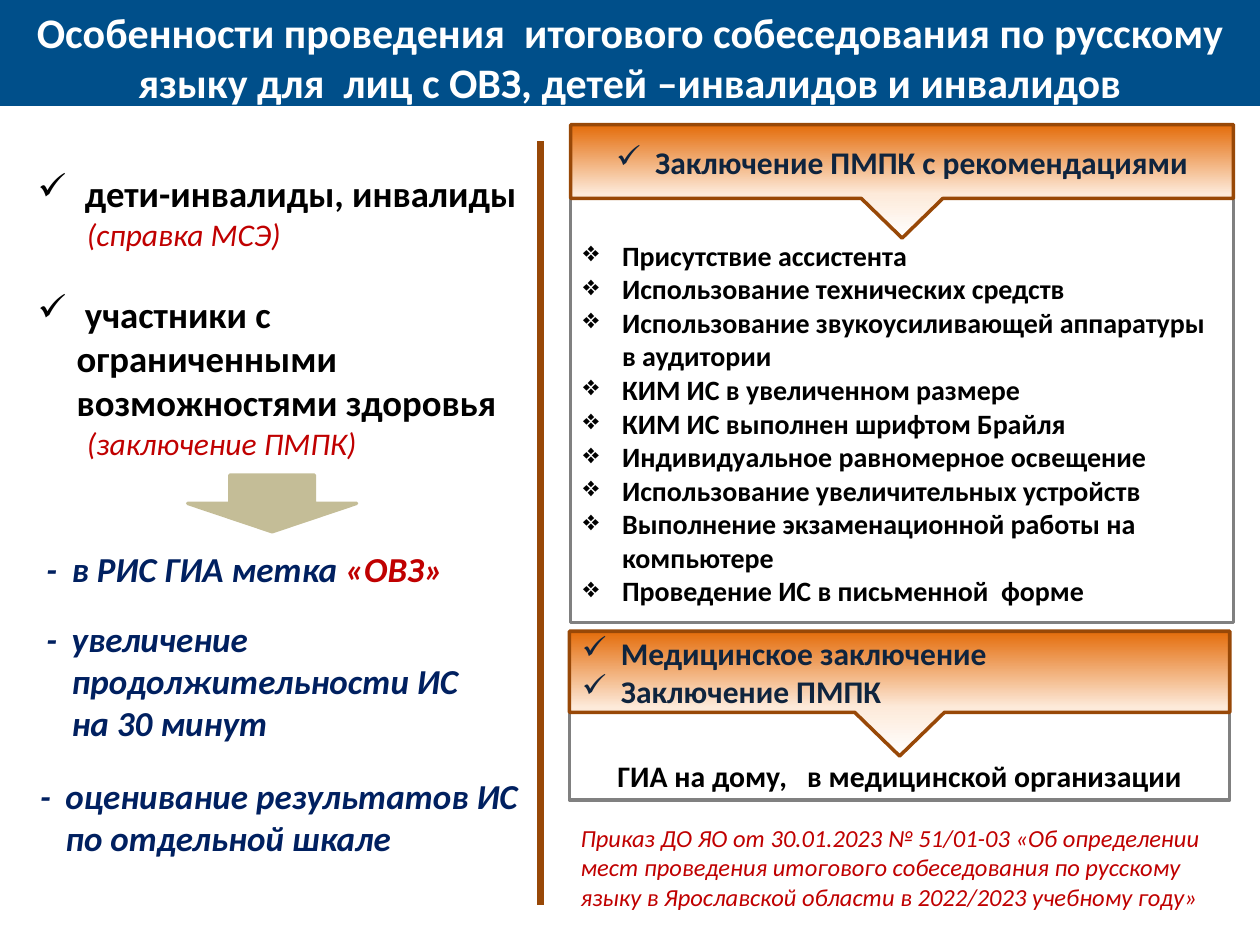
from lxml import etree
from pptx import Presentation
from pptx import util as u
from pptx.dml.color import RGBColor
from pptx.enum import shapes, text
from pptx.oxml import ns

WIDTH, HEIGHT = 10, 7.5
FONT = "Calibri"
WHITE = RGBColor(0xFF, 0xFF, 0xFF)
BLACK = RGBColor(0, 0, 0)
BLUE = RGBColor(0x00, 0x4F, 0x8A)
NAVY = RGBColor(0x00, 0x20, 0x60)
INK = RGBColor(0x0F, 0x24, 0x3E)
RED = RGBColor(0xC0, 0, 0)
SAND = RGBColor(0xC4, 0xBD, 0x97)
GREY = RGBColor(0x80, 0x80, 0x80)
BROWN = RGBColor(0x98, 0x48, 0x07)
GRADIENT = [(0, "E46C0A"), (61, "FDEADA"), (100, "FFFFFF")]

TITLE = ("Особенности проведения  итогового собеседования по русскому "
         "языку для  лиц с ОВЗ, детей –инвалидов и инвалидов")
GROUPS = [
    (" дети-инвалиды, инвалиды", "(справка МСЭ)"),
    (" участники с ограниченными возможностями здоровья", "(заключение ПМПК)"),
]
CONDITIONS = [
    "Присутствие ассистента",
    "Использование технических средств",
    "Использование звукоусиливающей аппаратуры в аудитории",
    "КИМ ИС в увеличенном размере",
    "КИМ ИС выполнен шрифтом Брайля",
    "Индивидуальное равномерное освещение",
    "Использование увеличительных устройств",
    "Выполнение экзаменационной работы на компьютере",
    "Проведение ИС в письменной  форме",
]
RECOMMENDATIONS = ["Заключение ПМПК с рекомендациями"]
DOCUMENTS = ["Медицинское заключение", "Заключение ПМПК"]
PLACE = "ГИА на дому,   в медицинской организации"
ORDER = ("Приказ ДО ЯО от 30.01.2023 № 51/01-03 «Об определении мест проведения "
         "итогового собеседования по русскому языку в Ярославской области "
         "в 2022/2023 учебному году»")

HEADING = dict(size=u.Pt(24), bold=True, color=WHITE)
GROUP = dict(size=u.Pt(21), bold=True, color=BLACK)
PROOF = dict(size=u.Pt(18), italic=True, color=RED)
MEASURE = dict(size=u.Pt(20), bold=True, italic=True, color=NAVY)
MARK = dict(MEASURE, color=RED)
CONDITION = dict(size=u.Pt(16), bold=True, color=BLACK)
CALLOUT = dict(size=u.Pt(18), bold=True, color=INK)
VENUE = dict(size=u.Pt(17), bold=True, color=BLACK)
SOURCE = dict(size=u.Pt(14), italic=True, color=RED)

BULLET_INDENT = 0.31
DASH_INDENT = 0.2
PROOF_INDENT = 0.39
LEFT, CENTER = text.PP_ALIGN.LEFT, text.PP_ALIGN.CENTER
TOP, MIDDLE, BOTTOM = (text.MSO_ANCHOR.TOP, text.MSO_ANCHOR.MIDDLE,
                       text.MSO_ANCHOR.BOTTOM)


def inches(box):
    return [u.Inches(value) for value in box]


def para(*runs, align=LEFT, margin=0, hang=0, bullet=None, before=0):
    return dict(runs=runs, align=align, margin=margin, hang=hang,
                bullet=bullet, before=before)


def bulleted(words, style, bullet, **options):
    return para((words, style), margin=BULLET_INDENT, hang=BULLET_INDENT,
                bullet=bullet, **options)


def dashed(*runs):
    return para(*runs, margin=DASH_INDENT, hang=DASH_INDENT)


def write(shape, paragraphs, anchor=TOP, top_inset=0.05):
    frame = shape.text_frame
    frame.word_wrap = True
    frame.auto_size = text.MSO_AUTO_SIZE.NONE
    frame.vertical_anchor = anchor
    frame.margin_top = u.Inches(top_inset)
    for index, content in enumerate(paragraphs):
        paragraph = frame.add_paragraph() if index else frame.paragraphs[0]
        paragraph.alignment = content["align"]
        paragraph.space_before = u.Pt(content["before"])
        properties = paragraph._p.get_or_add_pPr()
        properties.set("marL", str(u.Inches(content["margin"])))
        properties.set("indent", str(-u.Inches(content["hang"])))
        if content["bullet"]:
            etree.SubElement(properties, ns.qn("a:buChar"), char=content["bullet"])
        for words, style in content["runs"]:
            run = paragraph.add_run()
            run.text = words
            run.font.name = FONT
            for name, value in style.items():
                if name == "color":
                    run.font.color.rgb = value
                else:
                    setattr(run.font, name, value)


def add_text(slide, box, paragraphs):
    write(slide.shapes.add_textbox(*inches(box)), paragraphs)


def add_shape(slide, kind, box, line, fill=None):
    shape = slide.shapes.add_shape(kind, *inches(box))
    shape.shadow.inherit = False
    shape.line.color.rgb = line
    shape.line.width = u.Pt(2)
    if fill is None:
        shape.fill.background()
    else:
        shape.fill.solid()
        shape.fill.fore_color.rgb = fill
    return shape


def add_callout(slide, box, lines, align):
    shape = add_shape(slide, shapes.MSO_SHAPE.DOWN_ARROW_CALLOUT, box, BROWN)
    for index, value in enumerate((1.33, 0.36, 0.35, 0.65)):
        shape.adjustments[index] = value
    shape.fill.gradient()
    shape.fill.gradient_angle = 270
    stops = shape._element.spPr.find(".//" + ns.qn("a:gsLst"))
    for stop in list(stops):
        stops.remove(stop)
    for position, color in GRADIENT:
        stop = etree.SubElement(stops, ns.qn("a:gs"), pos=str(position * 1000))
        etree.SubElement(stop, ns.qn("a:srgbClr"), val=color)
    write(shape, [bulleted(line, CALLOUT, "✓", align=align) for line in lines], MIDDLE)


def add_title(slide):
    title = slide.shapes.title
    title.left, title.top, title.width, title.height = inches((0, 0, WIDTH, 0.84))
    title.fill.solid()
    title.fill.fore_color.rgb = BLUE
    write(title, [para((TITLE, HEADING), align=CENTER)])


def add_left_column(slide):
    groups = []
    for index, (name, proof) in enumerate(GROUPS):
        groups.append(bulleted(name, GROUP, "✓", before=22 * index))
        groups.append(para((proof, PROOF), margin=PROOF_INDENT))
    add_shape(slide, shapes.MSO_SHAPE.DOWN_ARROW, (1.49, 3.77, 1.34, 0.45), SAND, SAND)
    add_text(slide, (0.2, 1.31, 4.09, 2.42), groups)
    add_text(slide, (0.27, 4.3, 3.87, 0.44),
             [dashed(("-\tв РИС ГИА метка ", MEASURE), ("«ОВЗ»", MARK))])
    add_text(slide, (0.27, 4.85, 4.1, 1.11),
             [dashed(("-\tувеличение продолжительности ИС", MEASURE)),
              para(("на 30 минут", MEASURE), margin=DASH_INDENT)])
    add_text(slide, (0.22, 6.1, 4.15, 0.77),
             [dashed(("-\tоценивание результатов ИС по отдельной шкале", MEASURE))])


def add_divider(slide):
    divider = slide.shapes.add_connector(shapes.MSO_CONNECTOR.STRAIGHT,
                                         *inches((4.29, 1.12, 4.29, 7.18)))
    divider.line.color.rgb = BROWN
    divider.line.width = u.Pt(4)
    etree.SubElement(divider._element.spPr, ns.qn("a:effectLst"))


def add_right_column(slide):
    rectangle = shapes.MSO_SHAPE.RECTANGLE
    conditions = add_shape(slide, rectangle, (4.53, 1.55, 5.26, 3.39), GREY)
    write(conditions, [bulleted(line, CONDITION, "❖") for line in CONDITIONS],
          top_inset=0.34)
    add_callout(slide, (4.53, 0.99, 5.26, 0.9), RECOMMENDATIONS, CENTER)
    venue = add_shape(slide, rectangle, (4.52, 5.65, 5.24, 0.7), GREY)
    write(venue, [para((PLACE, VENUE), align=CENTER)], BOTTOM)
    add_callout(slide, (4.52, 5.01, 5.24, 0.99), DOCUMENTS, LEFT)
    add_text(slide, (4.51, 6.48, 5.29, 0.81), [para((ORDER, SOURCE))])


def main():
    presentation = Presentation()
    presentation.slide_width, presentation.slide_height = inches((WIDTH, HEIGHT))
    slide = presentation.slides.add_slide(presentation.slide_layouts[5])
    add_title(slide)
    add_left_column(slide)
    add_divider(slide)
    add_right_column(slide)
    presentation.save("out.pptx")


if __name__ == "__main__":
    main()
